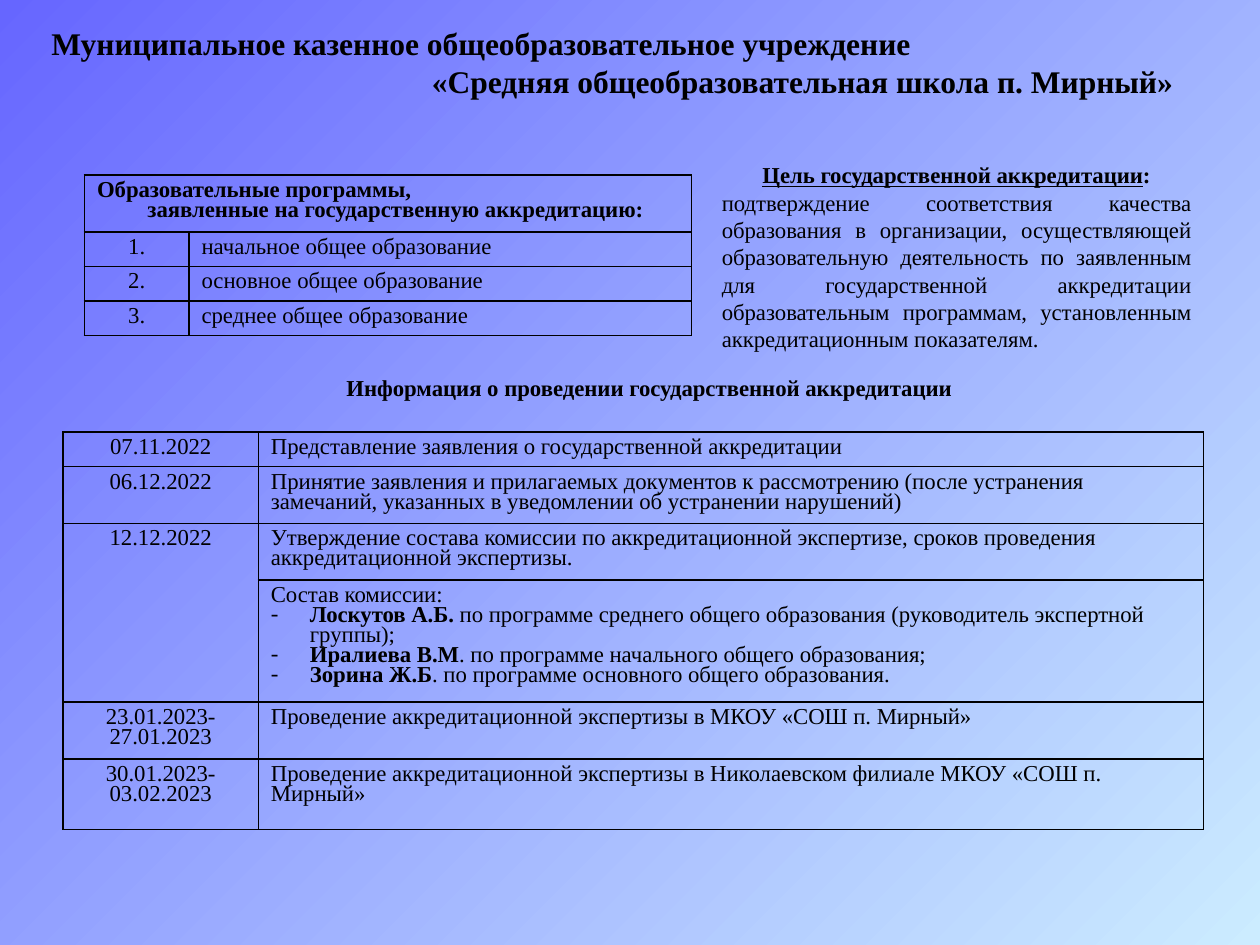
from lxml.etree import SubElement as Sub
from pptx import Presentation
from pptx.dml.color import RGBColor
from pptx.enum.text import MSO_ANCHOR as Anchor, PP_ALIGN as Align
from pptx.oxml.ns import qn
from pptx.util import Inches, Pt

BLACK = RGBColor(0, 0, 0)
BLUE = RGBColor(0x66, 0x66, 0xFF)
SKY = RGBColor(0xCC, 0xEC, 0xFF)
FONT = "Times New Roman"

TITLE = [
    "Муниципальное казенное общеобразовательное учреждение",
    "«Средняя общеобразовательная школа п. Мирный»",
]
LEVELS = [
    "начальное общее образование",
    "основное общее образование",
    "среднее общее образование",
]
GOAL = (
    "подтверждение соответствия качества образования в организации, "
    "осуществляющей образовательную деятельность по заявленным для "
    "государственной аккредитации образовательным программам, "
    "установленным аккредитационным показателям."
)
EVENTS = [
    ("07.11.2022", "Представление заявления о государственной аккредитации"),
    ("06.12.2022", "Принятие заявления и прилагаемых документов к рассмотрению "
     "(после устранения замечаний, указанных в уведомлении об устранении нарушений)"),
    ("12.12.2022", "Утверждение состава комиссии по аккредитационной экспертизе, "
     "сроков проведения аккредитационной экспертизы."),
    ("", "Состав комиссии:"),
    ("23.01.2023-27.01.2023",
     "Проведение аккредитационной экспертизы в МКОУ «СОШ п. Мирный»"),
    ("30.01.2023-03.02.2023", "Проведение аккредитационной экспертизы "
     "в Николаевском филиале МКОУ «СОШ п. Мирный»"),
]
EXPERTS = [
    ("Лоскутов А.Б.", " по программе среднего общего образования "
     "(руководитель экспертной группы);"),
    ("Иралиева В.М", ". по программе начального общего образования;"),
    ("Зорина Ж.Б", ". по программе основного общего образования."),
]


def style(para, size=13, bold=False, align=Align.LEFT, space=None):
    """Format a paragraph and all its runs."""
    para.alignment = align
    if space:
        para.line_spacing = space
    for run in para.runs:
        font = run.font
        font.name, font.size, font.bold = FONT, Pt(size), bold
        font.color.rgb = BLACK


def indent(para, left, first=0):
    """Set the left margin and first-line offset of a paragraph."""
    props = para._p.get_or_add_pPr()
    props.set("marL", str(Inches(left)))
    props.set("indent", str(Inches(first)))
    return props


def add_text(slide, box, lines):
    """Add a wrapping text box and return its paragraphs."""
    frame = slide.shapes.add_textbox(*map(Inches, box)).text_frame
    frame.word_wrap = True
    frame.text = "\n".join(lines)
    return frame.paragraphs


def add_edges(cell):
    """Draw thin black borders and clear the fill of a cell."""
    props = cell._tc.get_or_add_tcPr()
    for side in ("lnL", "lnR", "lnT", "lnB"):
        line = Sub(props, qn(f"a:{side}"), w=str(Pt(1)))
        fill = Sub(line, qn("a:solidFill"))
        Sub(fill, qn("a:srgbClr"), val=str(BLACK))
    cell.fill.background()


def add_grid(slide, left, top, cols, rows):
    """Add an empty bordered table with the given column and row sizes."""
    box = (left, top, sum(cols), sum(rows))
    table = slide.shapes.add_table(len(rows), len(cols), *map(Inches, box)).table
    table.first_row = table.horz_banding = False
    for col, width in zip(table.columns, cols):
        col.width = Inches(width)
    for row, height in zip(table.rows, rows):
        row.height = Inches(height)
    for cell in table.iter_cells():
        cell.vertical_anchor = Anchor.TOP
        add_edges(cell)
    return table


def fill_row(table, index, values):
    """Write a centred key and a left-aligned description."""
    for col, (text, align) in enumerate(zip(values, (Align.CENTER, Align.LEFT))):
        frame = table.cell(index, col).text_frame
        frame.text = text
        style(frame.paragraphs[0], align=align, space=0.8)


def add_expert(frame, name, role):
    """Append a dashed item with a bold name."""
    para = frame.add_paragraph()
    for text in (name, role):
        para.add_run().text = text
    style(para, space=0.8)
    para.runs[0].font.bold = True
    props = indent(para, 0.31, -0.31)
    Sub(props, qn("a:buFont"), typeface=FONT)
    Sub(props, qn("a:buChar"), char="-")


def add_levels(slide):
    """Add the table of education programmes."""
    table = add_grid(slide, 0.67, 1.39, [0.83, 3.99], [0.45] + [0.27] * 3)
    head = table.cell(0, 0)
    head.merge(table.cell(0, 1))
    head.text_frame.text = (
        "Образовательные программы,\nзаявленные на государственную аккредитацию:"
    )
    for para in head.text_frame.paragraphs:
        style(para, bold=True, space=0.8)
    indent(para, 0.4)
    for num, text in enumerate(LEVELS, 1):
        fill_row(table, num, (f"{num}.", text))


def add_events(slide):
    """Add the table of accreditation dates."""
    rows = [0.27, 0.45, 0.45, 0.96, 0.45, 0.56]
    table = add_grid(slide, 0.5, 3.43, [1.55, 7.5], rows)
    for index, event in enumerate(EVENTS):
        fill_row(table, index, event)
    for expert in EXPERTS:
        add_expert(table.cell(3, 1).text_frame, *expert)
    table.cell(2, 0).merge(table.cell(3, 0))


def paint(slide):
    """Give the slide a diagonal gradient."""
    fill = slide.background.fill
    fill.gradient()
    fill.gradient_angle = 315
    for stop, color, place in zip(fill.gradient_stops, (BLUE, SKY), (0, 1)):
        stop.color.rgb = color
        stop.position = place


def main():
    """Build and save the slide."""
    deck = Presentation()
    deck.slide_width, deck.slide_height = Inches(10), Inches(7.5)
    slide = deck.slides.add_slide(deck.slide_layouts[6])
    paint(slide)

    title = add_text(slide, (0.31, 0.14, 9.69, 1.08), TITLE)
    for para in title:
        style(para, size=18, bold=True)
    indent(title[1], 3.02)

    add_levels(slide)

    lines = ["Цель государственной аккредитации", GOAL]
    head, body = add_text(slide, (5.63, 1.23, 3.92, 1.85), lines)
    head.add_run().text = ":"
    style(head, bold=True, align=Align.CENTER)
    head.runs[0].font.underline = True
    style(body, align=Align.JUSTIFY)

    lines = ["Информация о проведении государственной аккредитации"]
    info = add_text(slide, (0.75, 2.96, 8.8, 0.28), lines)[0]
    style(info, bold=True, align=Align.CENTER, space=0.8)

    add_events(slide)
    deck.save("out.pptx")


if __name__ == "__main__":
    main()
